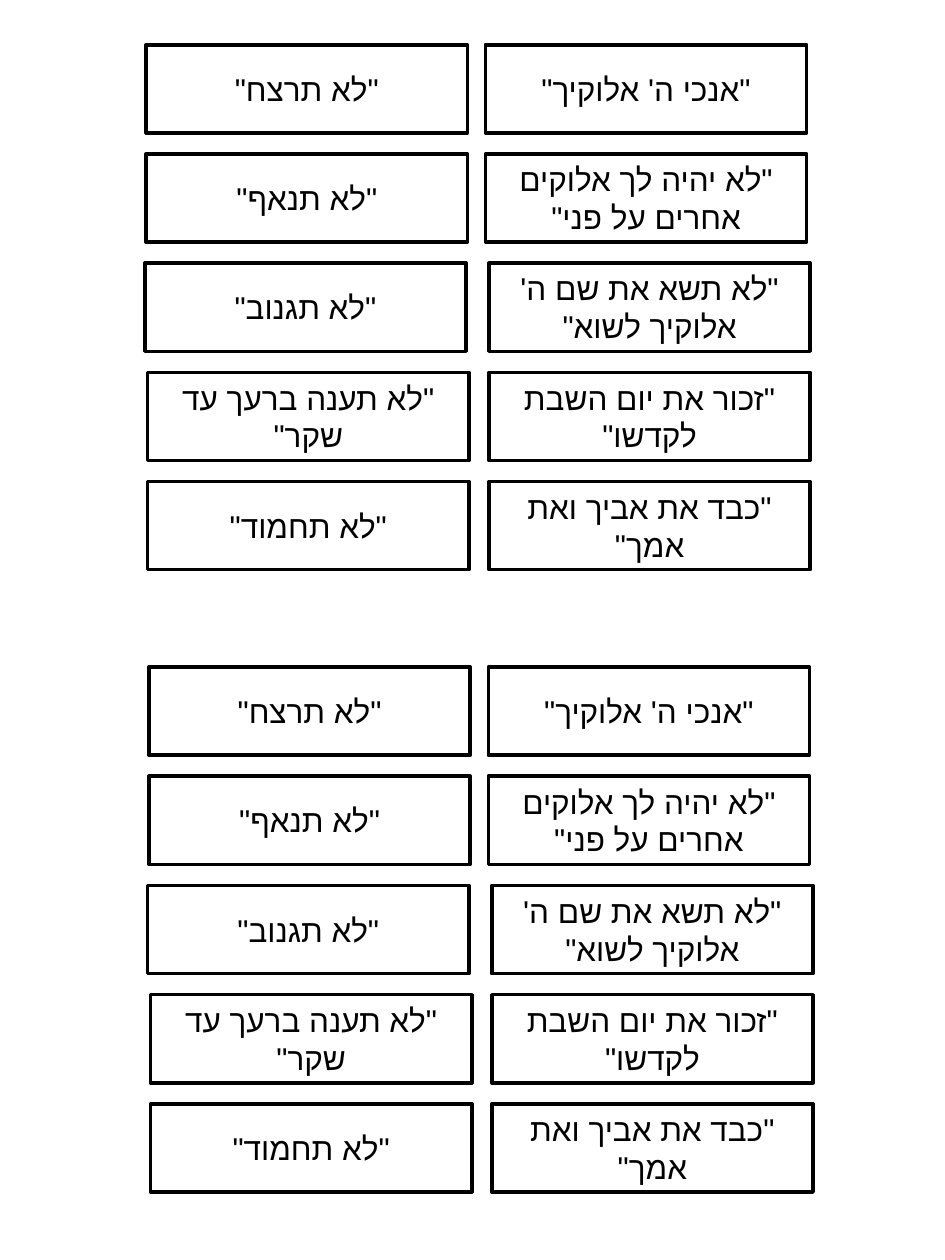
from lxml import etree
from pptx import Presentation
from pptx.dml.color import RGBColor
from pptx.enum import lang, shapes, text
from pptx.oxml import ns
from pptx.util import Pt

BLACK = RGBColor(0, 0, 0)
WHITE = RGBColor(255, 255, 255)

CARD_WIDTH, CARD_HEIGHT = 183.6, 50.4
FIRST_TOP, ROW_STEP = 25.6, 62.4
SET_OFFSETS = [(0, 0), (1.6, 355.6)]

# Each column holds (left, wording) from the top row down
RIGHT_COLUMN = [
    (277.4, "\"אנכי ה' אלוקיך\""),
    (277.4, '"לא יהיה לך אלוקים אחרים על פני"'),
    (279.4, "\"לא תשא את שם ה' אלוקיך לשוא\""),
    (279.4, '"זכור את יום השבת לקדשו"'),
    (279.4, '"כבד את אביך ואת אמך"'),
]
LEFT_COLUMN = [
    (83.5, '"לא תרצח"'),
    (83.5, '"לא תנאף"'),
    (82.8, '"לא תגנוב"'),
    (84.4, '"לא תענה ברעך עד שקר"'),
    (84.4, '"לא תחמוד"'),
]


class CardSheet:
    font_format = {
        "name": "Arial",
        "size": Pt(18),
        "language_id": lang.MSO_LANGUAGE_ID.HEBREW,
    }
    frame_format = {
        "word_wrap": True,
        "vertical_anchor": text.MSO_ANCHOR.MIDDLE,
    }

    def __init__(self, page):
        self.page = page

    def card(self, group, left, top, wording):
        box = group.shapes.add_shape(
            shapes.MSO_SHAPE.RECTANGLE,
            Pt(left), Pt(top), Pt(CARD_WIDTH), Pt(CARD_HEIGHT),
        )
        box.shadow.inherit = False
        box.fill.solid()
        box.fill.fore_color.rgb = WHITE
        box.line.color.rgb = BLACK
        box.line.width = Pt(2)
        for name, value in self.frame_format.items():
            setattr(box.text_frame, name, value)
        self.hebrew_text(box.text_frame.paragraphs[0], wording)

    def hebrew_text(self, para, wording):
        """Write centred right-to-left text, with the font set for Hebrew too."""
        para.alignment = text.PP_ALIGN.CENTER
        para._p.get_or_add_pPr().set("rtl", "1")
        span = para.add_run()
        span.text = wording
        span.font.color.rgb = BLACK
        for name, value in self.font_format.items():
            setattr(span.font, name, value)
        complex_font = etree.SubElement(span._r.get_or_add_rPr(), ns.qn("a:cs"))
        complex_font.set("typeface", self.font_format["name"])

    def card_set(self, shift_x, shift_y):
        group = self.page.shapes.add_group_shape()
        for column in (RIGHT_COLUMN, LEFT_COLUMN):
            for row, (left, wording) in enumerate(column):
                top = FIRST_TOP + row * ROW_STEP
                self.card(group, left + shift_x, top + shift_y, wording)


def main():
    deck = Presentation()
    deck.slide_width, deck.slide_height = Pt(540), Pt(720)
    sheet = CardSheet(deck.slides.add_slide(deck.slide_layouts[6]))
    for shift_x, shift_y in SET_OFFSETS:
        sheet.card_set(shift_x, shift_y)
    deck.save("out.pptx")


if __name__ == "__main__":
    main()
